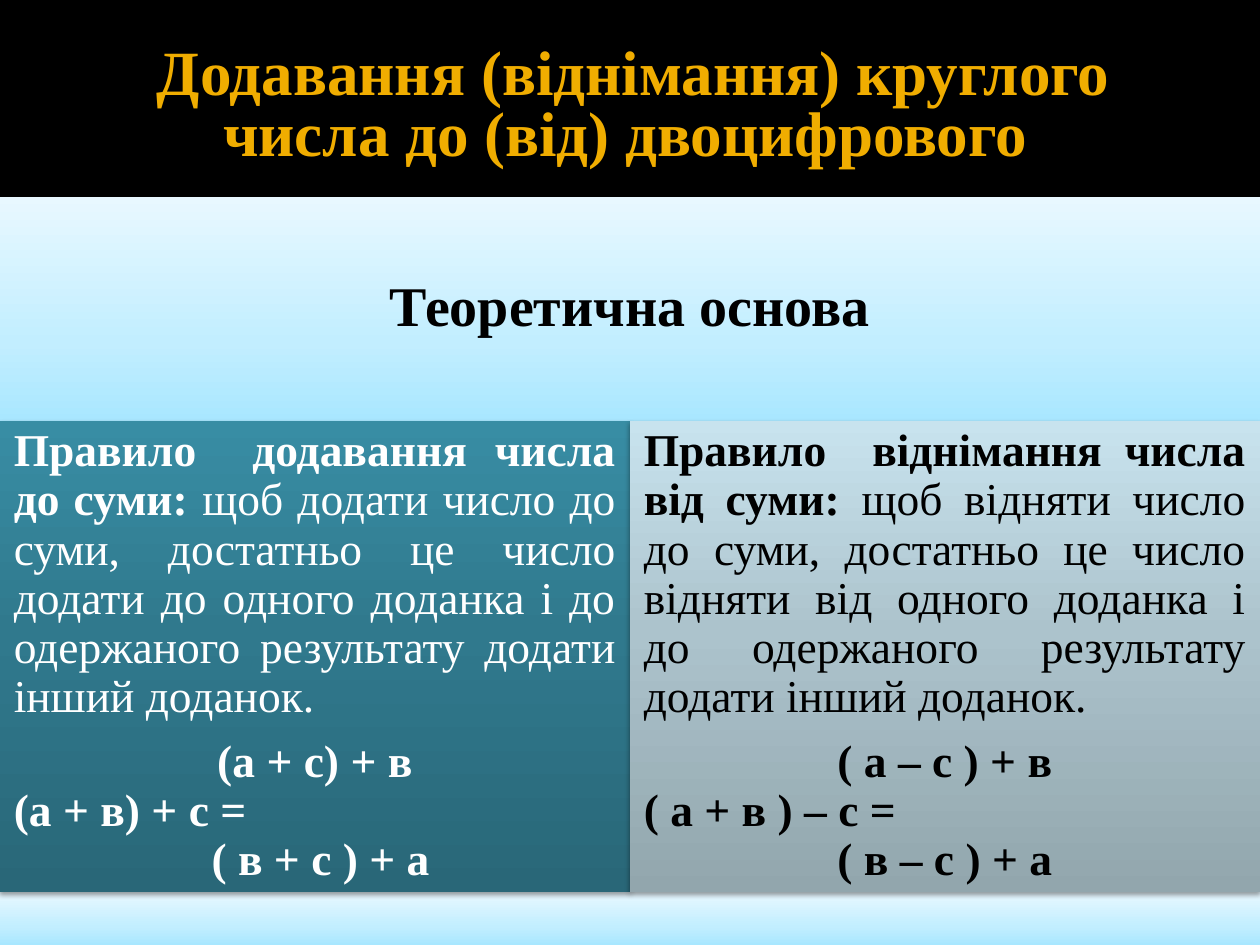
from lxml import etree
from pptx import Presentation
from pptx import util as u
from pptx.dml import color
from pptx.enum import shapes, text
from pptx.oxml import ns

LEFT, CENTER, JUSTIFY = (text.PP_ALIGN.LEFT, text.PP_ALIGN.CENTER,
                         text.PP_ALIGN.JUSTIFY)
SKY = [(0, "A9E7FF"), (35, "C2EEFF"), (100, "E8F8FF")]
TEAL = [(0, "296778"), (55, "30798D"), (100, "388DA4")]
SILVER = [(0, "92A6AD"), (55, "ACC3CC"), (100, "C8E3EE")]


def rgb(value):
    return color.RGBColor.from_string(value)


def add_span(para, words, size=26, ink="000000", bold=True,
             font="Times New Roman"):
    span = para.add_run()
    span.text = words
    span.font.name = font
    span.font.size = u.Pt(size)
    span.font.bold = bold
    span.font.color.rgb = rgb(ink)


def add_node(parent, tag, **attributes):
    node = etree.SubElement(parent, ns.qn(tag))
    for name, value in attributes.items():
        node.set(name, str(value))
    return node


class SlideBuilder:
    def __init__(self, deck):
        self.slide = deck.slides.add_slide(deck.slide_layouts[5])

    def band(self, left, top, width, height, fill="000000"):
        box = self.slide.shapes.add_shape(
            shapes.MSO_SHAPE.RECTANGLE, u.Inches(left), u.Inches(top),
            u.Inches(width), u.Inches(height))
        box.shadow.inherit = False
        box.line.fill.background()
        box.fill.solid()
        box.fill.fore_color.rgb = rgb(fill)
        return box

    def gradient_band(self, left, top, width, height, stops, shadow=False):
        box = self.band(left, top, width, height)
        # Three stops, running from the bottom edge upwards
        box.fill.gradient()
        box.fill.gradient_angle = 90
        stop_list = box.element.spPr.find(".//" + ns.qn("a:gsLst"))
        for old in list(stop_list):
            stop_list.remove(old)
        for position, value in stops:
            stop = add_node(stop_list, "a:gs", pos=position * 1000)
            add_node(stop, "a:srgbClr", val=value)
        if shadow:
            effects = box.element.spPr.find(ns.qn("a:effectLst"))
            outer = add_node(effects, "a:outerShdw", blurRad=u.Pt(3.1),
                             dist=u.Pt(2), dir=90 * 60000, rotWithShape=0)
            shade = add_node(outer, "a:srgbClr", val="000000")
            add_node(shade, "a:alpha", val=38000)
        return box

    def frame(self, box, margins):
        frame = box.text_frame
        frame.word_wrap = True
        frame.auto_size = text.MSO_AUTO_SIZE.NONE
        frame.vertical_anchor = text.MSO_ANCHOR.MIDDLE
        (frame.margin_left, frame.margin_top, frame.margin_right,
         frame.margin_bottom) = map(u.Inches, margins)
        return frame

    def paragraph(self, frame, align, spacing=0.9, after=0):
        first = frame.paragraphs[0]
        para = frame.add_paragraph() if first.runs else first
        para.alignment = align
        para.line_spacing = spacing
        para.space_before = u.Pt(0)
        para.space_after = u.Pt(after)
        return para

    def title(self, words):
        box = self.slide.shapes.title
        box.left, box.top = u.Inches(0.5), u.Inches(0.17)
        box.width, box.height = u.Inches(9), u.Inches(1.37)
        # Bring the title in front of its band
        self.slide.shapes.element.append(box.element)
        frame = self.frame(box, (0.1, 0.05, 0.05, 0.05))
        add_span(self.paragraph(frame, CENTER, spacing=0.8), words,
                 size=36, ink="F0AD00")

    def heading(self, words, top, height):
        box = self.gradient_band(0, top, 10, height, SKY)
        frame = self.frame(box, [0.13] * 4)
        add_span(self.paragraph(frame, CENTER), words, size=32)

    def rule(self, left, stops, ink, name, wording, formulas):
        box = self.gradient_band(left, 3.34, 5, 3.74, stops, shadow=True)
        frame = self.frame(box, [0.11] * 4)
        para = self.paragraph(frame, JUSTIFY, after=9)
        add_span(para, name, ink=ink)
        add_span(para, wording, ink=ink, bold=False)
        for align, formula in zip((CENTER, LEFT, CENTER), formulas):
            add_span(self.paragraph(frame, align), formula, ink=ink)


def main():
    deck = Presentation()
    deck.slide_width, deck.slide_height = u.Inches(10), u.Inches(7.5)
    page = SlideBuilder(deck)

    # Title on black
    page.band(0, 0, 10, 1.57)
    page.title("Додавання (віднімання) круглого числа до (від) двоцифрового ")

    # Heading and bottom strip
    page.heading("Теоретична основа", 1.56, 1.78)
    page.gradient_band(0, 7.08, 10, 0.42, SKY)

    # The two rules side by side
    page.rule(0, TEAL, "FFFFFF", "Правило  додавання числа до суми: ",
              "щоб додати число до суми, достатньо це число додати до одного "
              "доданка і до одержаного результату додати інший доданок.",
              ["(а + с) + в", "(а + в) + с =", " ( в + с ) + а"])
    page.rule(5, SILVER, "000000", "Правило  віднімання числа від суми: ",
              "щоб відняти число до суми, достатньо це число відняти від "
              "одного доданка і до одержаного результату додати інший доданок.",
              ["( а – с ) + в", "( а + в ) – с =", "( в – с ) + а"])

    deck.save("out.pptx")


if __name__ == "__main__":
    main()
